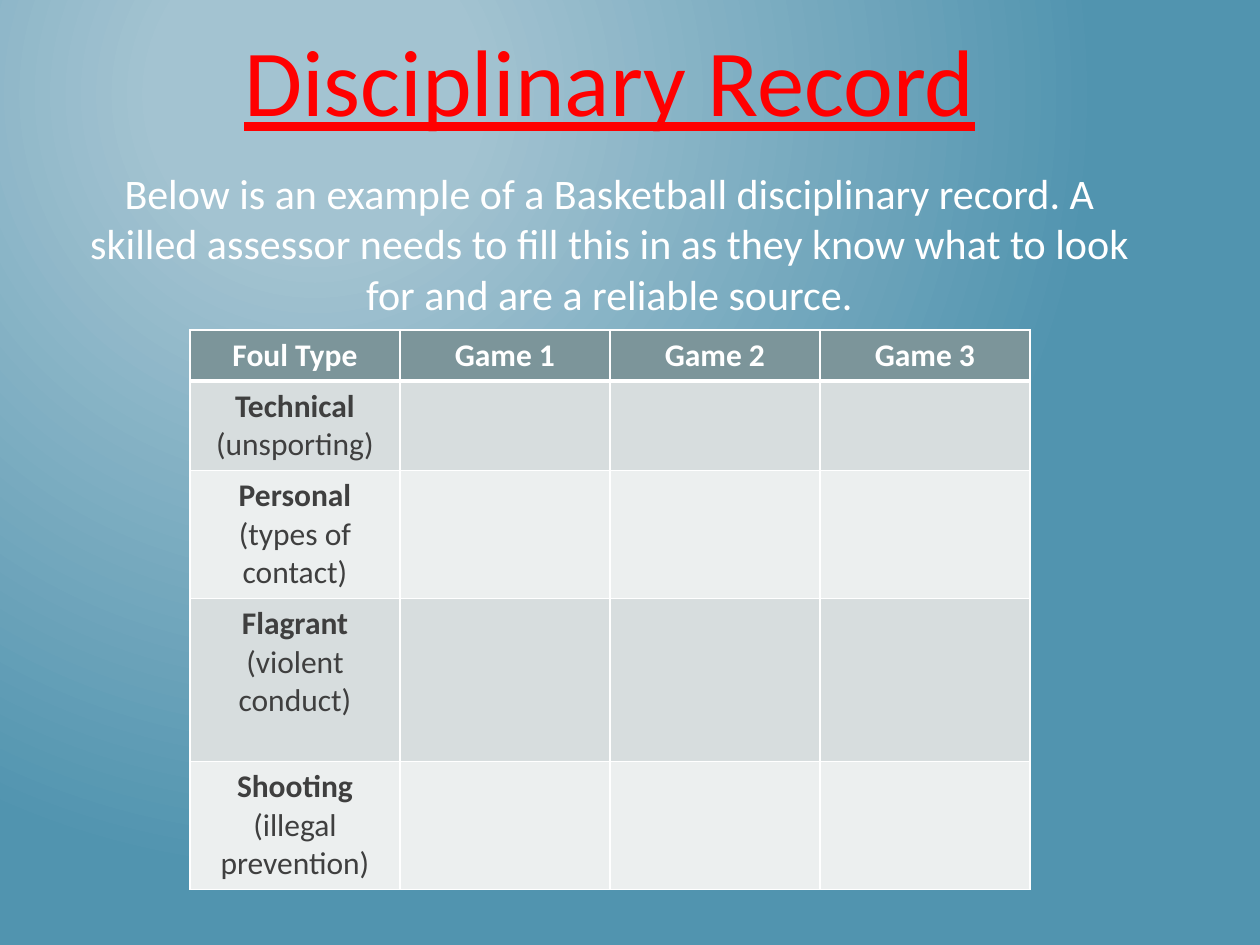
from lxml import etree
from pptx import Presentation
from pptx import util as u
from pptx.dml.color import RGBColor
from pptx.enum import text
from pptx.oxml import ns

PX = 914400 / 126
WHITE, RED, DARK = "FFFFFF", "FF0000", "3F3F3F"
HEADER, BANDS = "7C959A", ("D7DDDE", "ECEFEF")


def rgb(value):
    """Turn a hex string into a colour."""
    return RGBColor.from_string(value)


def px(value):
    """Turn pixels into EMU."""
    return u.Emu(round(value * PX))


def sub(parent, tag, **attrs):
    """Append a drawing element with attributes."""
    return etree.SubElement(parent, ns.qn(tag), attrs)


class Deck:
    """Hold the style and the current slide."""

    def __init__(self, width, height, font):
        """Open a deck with one title and body slide."""
        self.prs = Presentation()
        self.prs.slide_width, self.prs.slide_height = px(width), px(height)
        self.font = font
        self.s = self.prs.slides.add_slide(self.prs.slide_layouts[1])

    def background(self, stops, focus):
        """Fill the background with a circular gradient."""
        fill = self.s.background.fill
        fill.gradient()
        for stop, (position, color) in zip(fill.gradient_stops, stops):
            stop.position, stop.color.rgb = position, rgb(color)
        grad = self.s.element.find(".//" + ns.qn("a:gradFill"))
        grad.remove(grad.find(ns.qn("a:lin")))
        path = sub(grad, "a:path", path="circle")
        sub(path, "a:fillToRect", **{k: str(v * 1000) for k, v in zip("ltrb", focus)})

    def style(self, p, size, color, bold=None, underline=None):
        """Centre a paragraph and set its font."""
        p.alignment = text.PP_ALIGN.CENTER
        f = p.font
        f.name, f.size, f.color.rgb = self.font, u.Pt(size), rgb(color)
        f.bold, f.underline = bold, underline

    def placeholder(self, idx, box, words, size, color, underline=None):
        """Move a placeholder and give it one plain centred paragraph."""
        sp = self.s.placeholders[idx]
        sp.left, sp.top, sp.width, sp.height = map(px, box)
        tf = sp.text_frame
        tf.word_wrap, tf.auto_size = True, text.MSO_AUTO_SIZE.NONE
        tf.vertical_anchor = text.MSO_ANCHOR.TOP
        p = tf.paragraphs[0]
        p.text, p.space_before = words, u.Pt(0)
        self.style(p, size, color, underline=underline)
        pPr = p._p.get_or_add_pPr()
        pPr.set("marL", "0")
        pPr.set("indent", "0")
        pPr.insert_element_before(etree.Element(ns.qn("a:buNone")), "a:tabLst", "a:defRPr", "a:extLst")

    def cell(self, cell, fill, bottom):
        """Draw the borders and fill of a cell."""
        tcPr = cell._tc.get_or_add_tcPr()
        for side, width in zip("LRTB", (1, 1, 1, bottom)):
            ln = sub(tcPr, "a:ln" + side, w=str(u.Pt(width)))
            sub(sub(ln, "a:solidFill"), "a:srgbClr", val=WHITE)
        cell.fill.solid()
        cell.fill.fore_color.rgb = rgb(fill)

    def table(self, left, top, col, heights, heads, fouls, size):
        """Add a record table with a header row and banded foul rows."""
        frame = self.s.shapes.add_table(len(heights), len(heads), px(left), px(top),
                                        px(col * len(heads)), px(sum(heights)))
        table = frame.table
        for column in table.columns:
            column.width = px(col)
        for i, (row, height) in enumerate(zip(table.rows, heights)):
            row.height = px(height)
            for cell in row.cells:
                self.cell(cell, BANDS[(i - 1) % 2] if i else HEADER, 1 if i else 3)
                cell.text_frame.paragraphs[0].font.size = u.Pt(size)
        for i, head in enumerate(heads):
            p = table.cell(0, i).text_frame.paragraphs[0]
            p.text = head
            self.style(p, size, WHITE, bold=True)
        for i, (name, detail, split) in enumerate(fouls, 1):
            tf = table.cell(i, 0).text_frame
            p = tf.paragraphs[0]
            r = p.add_run()
            r.text, r.font.bold = (name if split else name + " "), True
            self.style(p, size, DARK)
            if split:
                p = tf.add_paragraph()
                self.style(p, size, DARK)
            r = p.add_run()
            r.text, r.font.bold = detail, False


def main():
    """Build the disciplinary record slide."""
    deck = Deck(1260, 945, "Calibri")
    deck.background([(0.2, "A3C3D1"), (1, "5194AF")], (50, 20, 100, 100))
    deck.placeholder(0, (74, 16, 1071, 128), "Disciplinary Record", 54, RED, underline=True)
    deck.placeholder(1, (74, 161, 1071, 166),
                     "Below is an example of a Basketball disciplinary record. A skilled assessor "
                     "needs to fill this in as they know what to look for and are a reliable source.",
                     24, WHITE)
    deck.table(190, 330, 210, (51, 89, 126, 163, 126),
               ["Foul Type"] + [f"Game {n}" for n in (1, 2, 3)],
               [("Technical", "(unsporting)", False),
                ("Personal", "(types of contact)", False),
                ("Flagrant", "(violent conduct)", False),
                ("Shooting", "(illegal prevention)", True)], 18)
    deck.prs.save("out.pptx")


if __name__ == "__main__":
    main()
